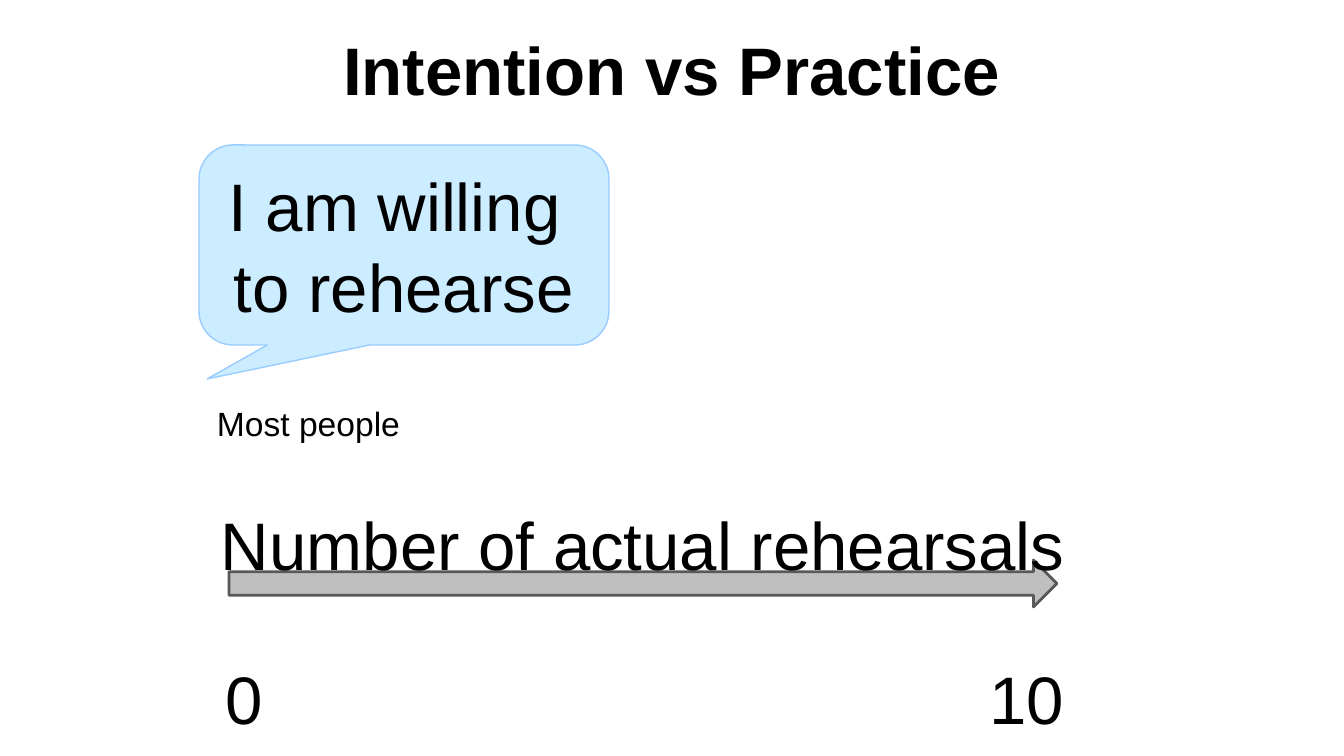
from pptx import Presentation
from pptx.dml.color import RGBColor
from pptx.enum.shapes import MSO_SHAPE as SHAPE
from pptx.enum.text import MSO_ANCHOR as ANCHOR, PP_ALIGN as ALIGN
from pptx.util import Emu, Pt

EMU_PER_PX = 914400 / 100.8
COLORS = {
    "text": "000000",
    "bubble": "CCECFF",
    "bubble_line": "99CCFF",
    "arrow": "BFBFBF",
    "arrow_line": "595959",
}


def px(length):
    return Emu(round(length * EMU_PER_PX))


def color(name):
    return RGBColor.from_string(COLORS[name])


class SlideBuilder:
    """Holds the text style and the current slide."""

    font_name = "Arial"
    font_size = 48

    def __init__(self, page):
        self.page = page

    def fill_text(self, shape, lines, size=None, align=ALIGN.LEFT, bold=False):
        frame = shape.text_frame
        frame.word_wrap = True
        frame.text = "\n".join(lines)
        for para in frame.paragraphs:
            para.alignment = align
            para.font.name = self.font_name
            para.font.size = Pt(size or self.font_size)
            para.font.bold = bold
            para.font.color.rgb = color("text")

    def text(self, left, top, width, height, line, **style):
        box = self.page.shapes.add_textbox(*map(px, (left, top, width, height)))
        self.fill_text(box, [line], **style)

    def shape(self, kind, left, top, width, height, fill, line, weight, adjust=()):
        shape = self.page.shapes.add_shape(kind, *map(px, (left, top, width, height)))
        shape.shadow.inherit = False
        shape.fill.solid()
        shape.fill.fore_color.rgb = color(fill)
        shape.line.color.rgb = color(line)
        shape.line.width = Pt(weight)
        for index, value in enumerate(adjust):
            shape.adjustments[index] = value
        return shape


def main():
    deck = Presentation()
    deck.slide_width, deck.slide_height = px(1344), px(756)
    slide = SlideBuilder(deck.slides.add_slide(deck.slide_layouts[6]))

    # Title
    slide.text(168, 23, 1008, 87, "Intention vs Practice", align=ALIGN.CENTER, bold=True)

    # Speech bubble and its speaker
    bubble = slide.shape(SHAPE.ROUNDED_RECTANGULAR_CALLOUT, 199, 145, 410, 200,
                         "bubble", "bubble_line", 1, (-0.48, 0.67, 0.17))
    slide.fill_text(bubble, ["I am willing ", "to rehearse"], align=ALIGN.CENTER)
    bubble.text_frame.vertical_anchor = ANCHOR.MIDDLE
    slide.text(207, 398, 378, 50, "Most people", size=24)

    # Rehearsal scale
    slide.shape(SHAPE.RIGHT_ARROW, 229, 560, 828, 47, "arrow", "arrow_line", 2)
    slide.text(206, 498, 874, 87, "Number of actual rehearsals", align=ALIGN.CENTER)
    slide.text(216, 652, 200, 87, "0")
    slide.text(874, 652, 200, 87, "10", align=ALIGN.RIGHT)

    deck.save("out.pptx")


if __name__ == "__main__":
    main()
